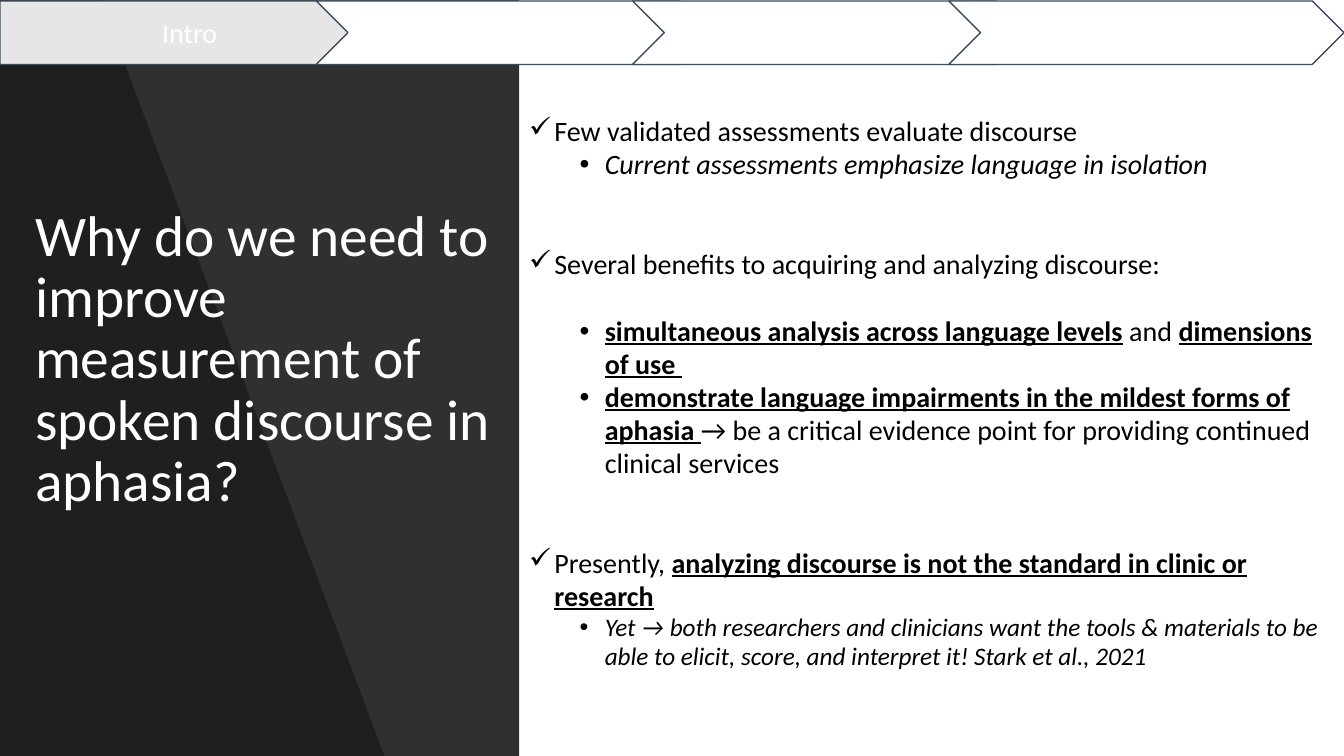
from lxml import etree
from pptx import Presentation
from pptx.dml.color import RGBColor
from pptx.enum.shapes import MSO_SHAPE as Preset
from pptx.enum.text import MSO_ANCHOR as Anchor, PP_ALIGN as Align
from pptx.oxml.ns import qn
from pptx.util import Inches, Pt

COLORS = {"panel": "000000", "text": "000000", "title": "FFFFFF",
          "active": "E7E6E6", "idle": "FFFFFF", "outline": "3E4C60"}
FONT = "Calibri"
TITLE = "Why do we need to improve measurement of spoken discourse in aphasia?"
STEPS = ["Intro", "", "", ""]
PLAIN = {}
ITALIC = {"italic": True}
SMALL = {"italic": True, "size": Pt(18)}
STRONG = {"bold": True, "underline": True}

# level, blank lines above, spans
POINTS = [
    (0, 0, [("Few validated assessments evaluate discourse", PLAIN)]),
    (1, 0, [("Current assessments emphasize language in isolation", ITALIC)]),
    (0, 2, [("Several benefits to acquiring and analyzing discourse:", PLAIN)]),
    (1, 1, [("simultaneous analysis across language levels", STRONG),
            (" and ", PLAIN), ("dimensions of use ", STRONG)]),
    (1, 0, [("demonstrate language impairments in the mildest forms of aphasia ", STRONG),
            ("→ be a critical evidence point for providing continued clinical services", PLAIN)]),
    (0, 2, [("Presently, ", PLAIN),
            ("analyzing discourse is not the standard in clinic or research", STRONG)]),
    (1, 0, [("Yet → both researchers and clinicians want the tools & materials to be able to "
             "elicit, score, and interpret it! Stark et al., 2021", SMALL)]),
]
BULLETS = [("✓", "Wingdings", 0.25), ("•", "Arial", 0.75)]
HANG = 0.25
LINE = 24

WIDTH, HEIGHT = 13.33, 7.5
PANEL_WIDTH = 5.15
TOP = 0.7
STEP_WIDTH, STEP_HEIGHT, STEP_TOP = 3.92, 0.63, 0.01
STEP_PITCH = (WIDTH - STEP_WIDTH) / (len(STEPS) - 1)


def rgb(name):
    return RGBColor.from_string(COLORS[name])


def paint(shape, color, opacity=None, outline=None):
    shape.shadow.inherit = False
    shape.fill.solid()
    shape.fill.fore_color.rgb = rgb(color)
    if opacity:
        fill = shape.fill._xPr.find(qn("a:solidFill"))[0]
        etree.SubElement(fill, qn("a:alpha"), val=str(opacity * 1000))
    if outline:
        shape.line.color.rgb = rgb(outline)
        shape.line.width = Pt(1)
    else:
        shape.line.fill.background()


def add_span(para, text, color, **formats):
    span = para.add_run()
    span.text = text
    span.font.color.rgb = rgb(color)
    for name, value in {"name": FONT, "size": Pt(20), **formats}.items():
        setattr(span.font, name, value)


def add_box(page, *place):
    frame = page.shapes.add_textbox(*map(Inches, place)).text_frame
    frame.word_wrap = True
    frame.vertical_anchor = Anchor.MIDDLE
    return frame


def add_bullet(para, level):
    mark, face, indent = BULLETS[level]
    props = para._p.get_or_add_pPr()
    props.set("marL", str(Inches(indent)))
    props.set("indent", str(-Inches(HANG)))
    if level:
        etree.SubElement(props, qn("a:buFont"), typeface=face)
    etree.SubElement(props, qn("a:buChar"), char=mark)


def add_panel(page):
    panel = page.shapes.add_shape(Preset.RECTANGLE, 0, 0, Inches(PANEL_WIDTH), Inches(HEIGHT))
    paint(panel, "panel", 81)
    outline = page.shapes.build_freeform(0, 0, scale=Inches(1))
    outline.add_line_segments([(0.95, 0), (3.59, HEIGHT), (0, HEIGHT)], close=True)
    paint(outline.convert_to_shape(), "panel", 35)
    para = add_box(page, 0.25, TOP, 4.76, 5.75).paragraphs[0]
    para.line_spacing = 0.89
    add_span(para, TITLE, "title", size=Pt(41))


def add_points(page):
    frame = add_box(page, PANEL_WIDTH, TOP, WIDTH - PANEL_WIDTH, 6.41)
    for index, (level, gap, spans) in enumerate(POINTS):
        para = frame.add_paragraph() if index else frame.paragraphs[0]
        para.level = level
        para.line_spacing = 0.98
        if gap:
            para.space_before = Pt(gap * LINE)
        add_bullet(para, level)
        for text, formats in spans:
            add_span(para, text, "text", **formats)


def add_steps(page):
    for index, label in enumerate(STEPS):
        step = page.shapes.add_shape(
            Preset.CHEVRON if index else Preset.PENTAGON, Inches(index * STEP_PITCH),
            Inches(STEP_TOP), Inches(STEP_WIDTH), Inches(STEP_HEIGHT))
        paint(step, "idle" if index else "active", outline="outline")
        if label:
            step.text_frame.vertical_anchor = Anchor.MIDDLE
            para = step.text_frame.paragraphs[0]
            para.alignment = Align.CENTER
            add_span(para, label, "title")


def main():
    deck = Presentation()
    deck.slide_width, deck.slide_height = Inches(WIDTH), Inches(HEIGHT)
    page = deck.slides.add_slide(deck.slide_layouts[6])
    add_panel(page)
    add_points(page)
    add_steps(page)
    deck.save("out.pptx")


if __name__ == "__main__":
    main()
